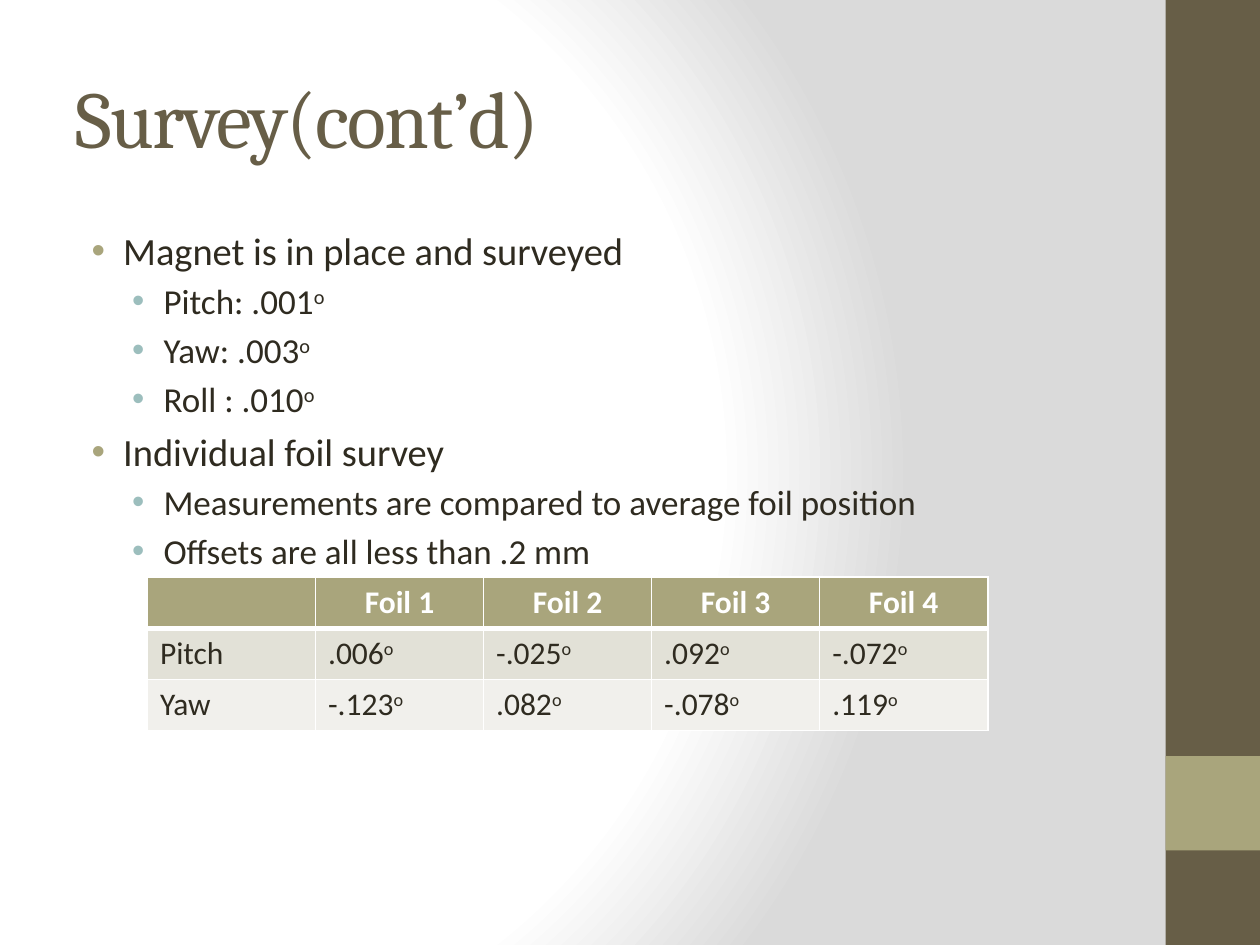
from lxml import etree
from pptx import Presentation
from pptx.dml.color import RGBColor
from pptx.enum import shapes, text
from pptx.oxml import parse_xml
from pptx.oxml.ns import nsdecls, qn
from pptx.util import Inches, Pt

COLORS = {"brown": "675E47", "olive": "A9A57C", "teal": "9CBEBD", "ink": "2F2B20",
          "white": "FFFFFF", "grey": "DADADA", "band": "E2E1D7", "pale": "F1F0EC"}

TITLE = "Survey(cont’d)"
# Each bullet is (level, text); "^" marks the start of a superscript.
BULLETS = [
    (0, "Magnet is in place and surveyed"),
    (1, "Pitch: .001^o"),
    (1, "Yaw: .003^o"),
    (1, "Roll : .010^o"),
    (0, "Individual foil survey"),
    (1, "Measurements are compared to average foil position"),
    (1, "Offsets are all less than .2 mm"),
]
# Level: text size, bullet colour, left margin
LEVELS = [(22, "olive", 0.38), (20, "teal", 0.7)]
HANGING = 0.25
FOILS = [
    ["", "Foil 1", "Foil 2", "Foil 3", "Foil 4"],
    ["Pitch", ".006^o", "-.025^o", ".092^o", "-.072^o"],
    ["Yaw", "-.123^o", ".082^o", "-.078^o", ".119^o"],
]
ROW_FILLS = ["olive", "band", "pale"]
BARS = [("brown", 0, 7.5), ("olive", 6, 0.75)]


def rgb(name):
    return RGBColor.from_string(COLORS[name])


def write(para, content, size, color, font="Calibri", bold=False):
    """Add runs to a paragraph, raising whatever follows a caret."""
    for i, part in enumerate(content.split("^")):
        span = para.add_run()
        span.text = part
        span.font.size, span.font.name, span.font.bold = Pt(size), font, bold
        span.font.color.rgb = rgb(color)
        if i:
            span.font._element.set("baseline", "30000")


def paint_background(page):
    page.background.fill.solid()
    props = page._element.find(".//" + qn("p:bgPr"))
    stops = "".join(
        f'<a:gs pos="{pos * 1000}"><a:srgbClr val="{COLORS[name]}"/></a:gs>'
        for pos, name in [(0, "white"), (75, "white"), (100, "grey")])
    props.replace(props[0], parse_xml(
        f'<a:gradFill {nsdecls("a")} rotWithShape="1"><a:gsLst>{stops}</a:gsLst>'
        '<a:path path="circle"><a:fillToRect l="20000" t="50000" r="100000" b="50000"/>'
        '</a:path></a:gradFill>'))


def add_text_box(page, top, height, anchor):
    box = page.shapes.add_textbox(Inches(0.5), Inches(top), Inches(8.33), Inches(height))
    box.text_frame.word_wrap = True
    box.text_frame.vertical_anchor = anchor
    return box.text_frame


def add_bullet(para, color, margin):
    props = para._p.get_or_add_pPr()
    props.set("marL", str(Inches(margin)))
    props.set("indent", str(-Inches(HANGING)))
    space = etree.SubElement(props, qn("a:spcBef"))
    etree.SubElement(space, qn("a:spcPct"), val="20000")
    tint = etree.SubElement(props, qn("a:buClr"))
    etree.SubElement(tint, qn("a:srgbClr"), val=COLORS[color])
    etree.SubElement(props, qn("a:buFont"), typeface="Arial")
    etree.SubElement(props, qn("a:buChar"), char="•")


def set_borders(cell, top, bottom):
    widths = {"lnL": 1, "lnR": 1, "lnT": top, "lnB": bottom}
    props = cell._tc.get_or_add_tcPr()
    for i, (side, width) in enumerate(widths.items()):
        props.insert(i, parse_xml(
            f'<a:{side} {nsdecls("a")} w="{Pt(width)}"><a:solidFill>'
            f'<a:srgbClr val="{COLORS["white"]}"/></a:solidFill></a:{side}>'))


def add_foil_table(page):
    table = page.shapes.add_table(len(FOILS), len(FOILS[0]), Inches(1.17), Inches(4.58),
                                  Inches(6.67), Inches(1.22)).table
    for r, row in enumerate(FOILS):
        header = r == 0
        for c, content in enumerate(row):
            cell = table.cell(r, c)
            cell.fill.solid()
            cell.fill.fore_color.rgb = rgb(ROW_FILLS[r])
            set_borders(cell, top=3 if r == 1 else 1, bottom=3 if header else 1)
            para = cell.text_frame.paragraphs[0]
            para.alignment = text.PP_ALIGN.CENTER if header else text.PP_ALIGN.LEFT
            write(para, content, 18, "white" if header else "ink", bold=header)


def main():
    deck = Presentation()
    deck.slide_width, deck.slide_height = Inches(10), Inches(7.5)
    page = deck.slides.add_slide(deck.slide_layouts[6])
    paint_background(page)

    for color, top, height in BARS:
        bar = page.shapes.add_shape(shapes.MSO_SHAPE.RECTANGLE, Inches(9.25), Inches(top),
                                    Inches(0.75), Inches(height))
        bar.shadow.inherit = False
        bar.fill.solid()
        bar.fill.fore_color.rgb = rgb(color)
        bar.line.fill.background()

    title = add_text_box(page, 0.3, 1.25, text.MSO_ANCHOR.MIDDLE).paragraphs[0]
    write(title, TITLE, 46, "brown", font="Cambria")
    title.runs[0].font._element.set("spc", "-100")

    body = add_text_box(page, 1.75, 5.25, text.MSO_ANCHOR.TOP)
    for i, (level, content) in enumerate(BULLETS):
        para = body.add_paragraph() if i else body.paragraphs[0]
        size, color, margin = LEVELS[level]
        para.level = level
        add_bullet(para, color, margin)
        write(para, content, size, "ink")

    add_foil_table(page)
    deck.save("out.pptx")


if __name__ == "__main__":
    main()
